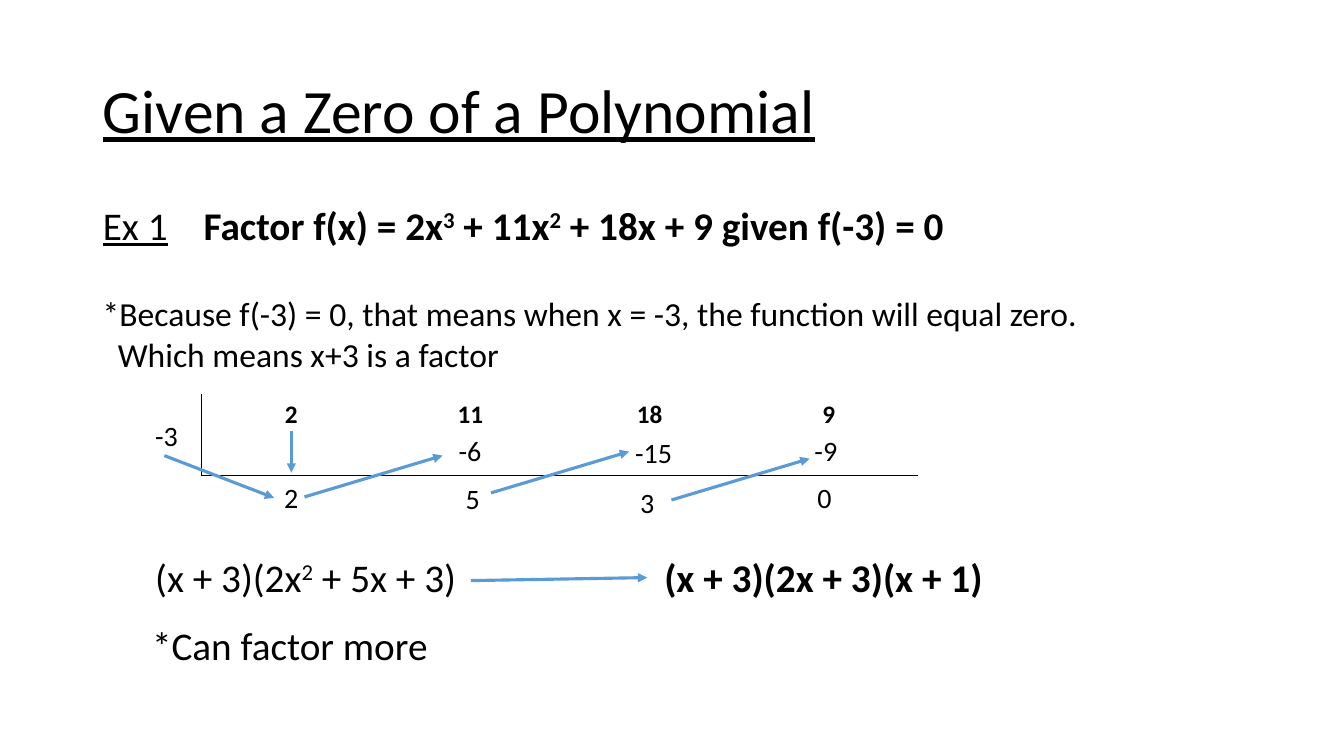
import dataclasses

import lxml.etree
import pptx
import pptx.dml.color
import pptx.enum.shapes
import pptx.enum.text
import pptx.oxml
import pptx.oxml.ns
import pptx.util

PX = 9144  # EMU per px, 100 px to the inch
qn = pptx.oxml.ns.qn


@dataclasses.dataclass(frozen=True)
class Theme:
    font: str = "Calibri"
    ink: str = "000000"
    arrow: str = "5B9BD5"
    title: int = 44
    large: int = 28
    note: int = 24
    step: int = 20
    cell: int = 18


THEME = Theme()


def px(*lengths):
    return [pptx.util.Emu(n * PX) for n in lengths]


def add_run(p, text, size, bold=False, underline=False, sup=False):
    r = p.add_run()
    r.text = text
    f = r.font
    f.name, f.size = THEME.font, pptx.util.Pt(size)
    f.bold, f.underline = bold, underline
    f.color.rgb = pptx.dml.color.RGBColor.from_string(THEME.ink)
    if sup:
        r._r.get_or_add_rPr().set("baseline", "30000")


def set_indent(p, left):
    pPr = p._p.get_or_add_pPr()
    pPr.set("marL", str(left * PX))
    pPr.set("indent", "0")
    return pPr


def fill_placeholder(sp, box, anchor):
    """Move a placeholder and return its first paragraph, set to the left."""
    sp.left, sp.top, sp.width, sp.height = px(*box)
    tf = sp.text_frame
    tf.auto_size = pptx.enum.text.MSO_AUTO_SIZE.NONE
    tf.vertical_anchor = anchor
    p = tf.paragraphs[0]
    p.alignment = pptx.enum.text.PP_ALIGN.LEFT
    p.line_spacing = 0.9
    return p


def add_label(s, box, *runs, size=THEME.large, bold=False):
    """Add a one-line text box; each run is a (text, is superscript) pair."""
    tf = s.shapes.add_textbox(*px(*box)).text_frame
    tf.word_wrap = False
    tf.auto_size = pptx.enum.text.MSO_AUTO_SIZE.SHAPE_TO_FIT_TEXT
    for text, sup in runs:
        add_run(tf.paragraphs[0], text, size, bold=bold, sup=sup)
    return tf


def add_arrow(s, x1, y1, x2, y2):
    c = s.shapes.add_connector(
        pptx.enum.shapes.MSO_CONNECTOR.STRAIGHT, *px(x1, y1, x2, y2))
    c.line.color.rgb = pptx.dml.color.RGBColor.from_string(THEME.arrow)
    c.line.width = pptx.util.Pt(2.25)
    ln = c.line._get_or_add_ln()
    lxml.etree.SubElement(ln, qn("a:tailEnd"), type="triangle")
    lxml.etree.SubElement(c._element.spPr, qn("a:effectLst"))


def set_borders(cell, *sides):
    tcPr = cell._tc.get_or_add_tcPr()
    for i, side in enumerate(sides):
        tcPr.insert(i, pptx.oxml.parse_xml(
            f'<a:{side} {pptx.oxml.ns.nsdecls("a")} w="12700"><a:solidFill>'
            f'<a:srgbClr val="{THEME.ink}"/></a:solidFill></a:{side}>'))


def add_division_table(s, coefficients):
    tbl = s.shapes.add_table(
        2, len(coefficients), *px(200, 391, 711, 81)).table
    tbl.first_row = tbl.horz_banding = False
    # "No Style, No Grid"
    tbl._tbl.tblPr.find(qn("a:tableStyleId")).text = (
        "{2D5ABB26-0587-4C30-8999-92F81FD0307C}")
    for row in range(2):
        for col, coefficient in enumerate(coefficients):
            cell = tbl.cell(row, col)
            cell.fill.background()
            sides = ["lnL"] * (col == 0) + ["lnB"] * (row == 1)
            set_borders(cell, *sides)
            if row == 0:
                p = cell.text_frame.paragraphs[0]
                p.alignment = pptx.enum.text.PP_ALIGN.CENTER
                add_run(p, coefficient, THEME.cell, bold=True)


def add_heading(s):
    anchors = pptx.enum.text.MSO_ANCHOR
    p = fill_placeholder(s.shapes.title, (92, 40, 1150, 145), anchors.MIDDLE)
    add_run(p, "Given a Zero of a Polynomial", THEME.title, underline=True)

    p = fill_placeholder(s.placeholders[1], (92, 200, 1150, 71), anchors.TOP)
    p.space_before = pptx.util.Pt(10)
    lxml.etree.SubElement(set_indent(p, 0), qn("a:buNone"))
    add_run(p, "Ex 1", THEME.large, underline=True)
    add_run(p, "\t", THEME.large)
    for text, sup in (("Factor f(x) = 2x", False), ("3", True),
                      (" + 11x", False), ("2", True),
                      (" + 18x + 9 given f(-3) = 0", False)):
        add_run(p, text, THEME.large, bold=True, sup=sup)


def add_explanation(s):
    tf = add_label(
        s, (92, 286, 1011, 91),
        ("*Because f(-3) = 0, that means when x = -3, "
         "the function will equal zero.", False), size=THEME.note)
    p = tf.add_paragraph()
    set_indent(p, 15)
    add_run(p, "Which means x+3 is a factor", THEME.note)


def add_synthetic_division(s):
    add_division_table(s, ("2", "11", "18", "9"))
    # Root, products and sums
    for text, x, y, w in (("-3", 144, 410, 43), ("2", 272, 472, 34),
                          ("-6", 445, 425, 43), ("5", 452, 473, 34),
                          ("-15", 620, 427, 57), ("3", 625, 477, 34),
                          ("-9", 798, 425, 43), ("0", 801, 472, 34)):
        add_label(s, (x, y, w, 44), (text, False), size=THEME.step)
    # Bring down, then multiply by the root
    add_arrow(s, 289, 428, 289, 469)
    add_arrow(s, 163, 452, 272, 494)
    for x, y in ((302, 493), (487, 489), (666, 496)):
        add_arrow(s, x, y, x + 137, y - 41)


def add_factored_form(s):
    add_label(s, (144, 544, 119, 57), ("(x + 3)", False))
    add_label(s, (241, 544, 226, 57),
              ("(2x", False), ("2", True), (" + 5x + 3)", False))
    add_label(s, (141, 611, 296, 57), ("*Can factor more", False))
    add_arrow(s, 467, 576, 642, 573)
    add_label(s, (649, 544, 340, 57),
              ("(x + 3)(2x + 3)(x + 1)", False), bold=True)


def main():
    prs = pptx.Presentation()
    prs.slide_width, prs.slide_height = px(1333, 750)
    s = prs.slides.add_slide(prs.slide_layouts[1])
    add_heading(s)
    add_explanation(s)
    add_synthetic_division(s)
    add_factored_form(s)
    prs.save("out.pptx")


if __name__ == "__main__":
    main()
